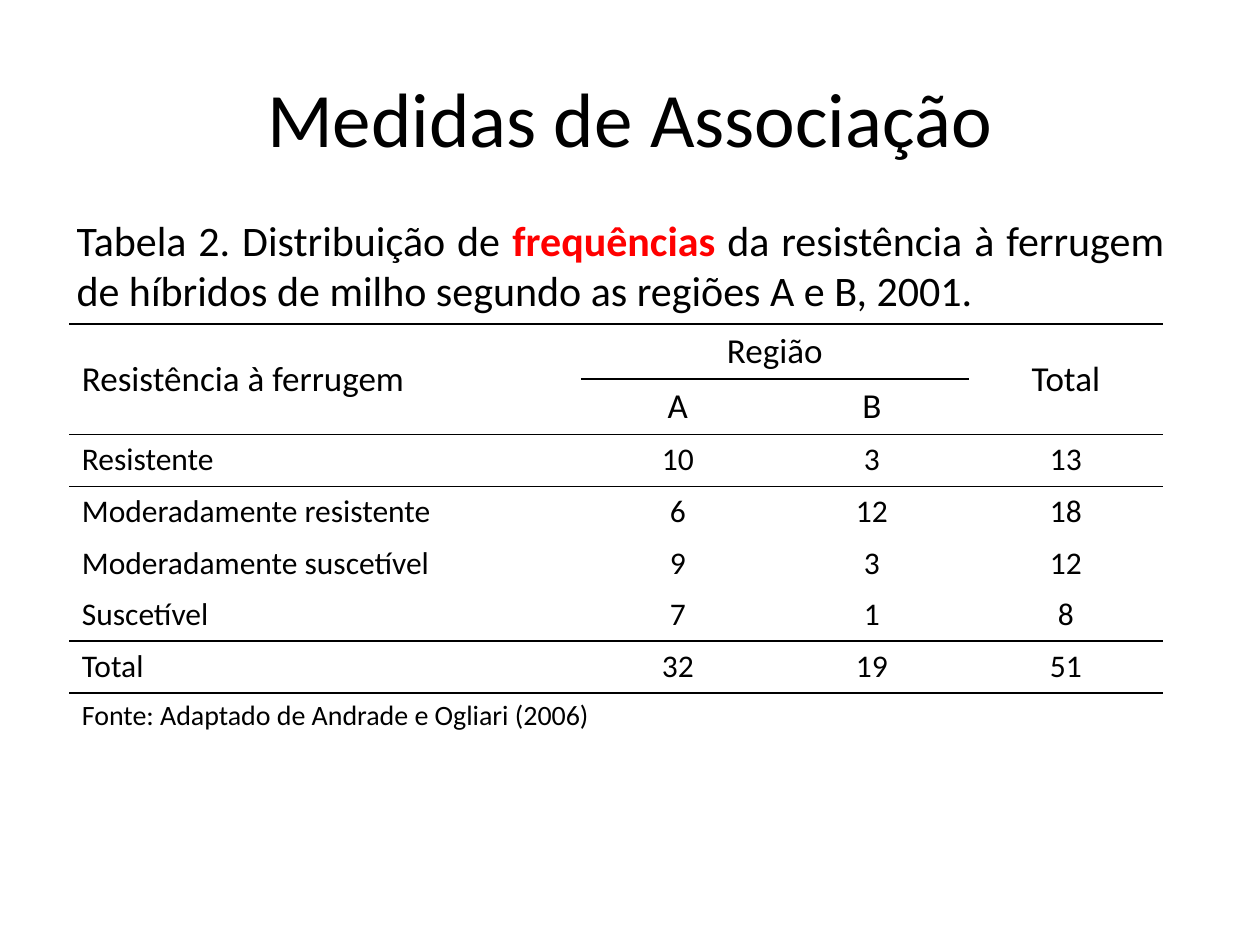
"""Build a slide with a frequency table of rust resistance by region."""
from lxml.etree import SubElement
from pptx import Presentation
from pptx.dml.color import RGBColor
from pptx.enum.text import MSO_ANCHOR, PP_ALIGN
from pptx.oxml.ns import qn
from pptx.util import Inches, Pt

BLACK, RED = "000000", "FF0000"
NO_STYLE_NO_GRID = "{2D5ABB26-0587-4C30-8999-92F81FD0307C}"
COLUMN_WIDTHS = [4.06, 1.54, 1.54, 1.54]
ROW_HEIGHTS = [0.44] * 2 + [0.41] * 6
TEXT_SIZES = [20] * 2 + [18] * 5 + [16]
ROWS = [
    ["Resistência à ferrugem", "Região", "", "Total"],
    ["", "A", "B", ""],
    ["Resistente", "10", "3", "13"],
    ["Moderadamente resistente", "6", "12", "18"],
    ["Moderadamente suscetível", "9", "3", "12"],
    ["Suscetível", "7", "1", "8"],
    ["Total", "32", "19", "51"],
    ["Fonte: Adaptado de Andrade e Ogliari (2006)", "", "", ""],
]
MERGES = [(0, 0, 1, 0), (0, 1, 0, 2), (0, 3, 1, 3), (7, 0, 7, 3)]
RULED_COLUMNS = {0: range(4), 1: (1, 2), 2: range(4), 6: range(4), 7: range(4)}


def add_text(paragraph, text, color=BLACK, **formats):
    """Add a run to the paragraph with the given font values."""
    run = paragraph.add_run()
    run.text = text
    run.font.color.rgb = RGBColor.from_string(color)
    for name, value in {"name": "Calibri", **formats}.items():
        setattr(run.font, name, value)


def add_border(cell, side):
    """Draw a thin black line on one side of the cell."""
    line = SubElement(cell._tc.get_or_add_tcPr(), qn(f"a:{side}"), w=str(Pt(1)))
    fill = SubElement(line, qn("a:solidFill"))
    SubElement(fill, qn("a:srgbClr"), val=BLACK)


presentation = Presentation()
presentation.slide_width, presentation.slide_height = Inches(10), Inches(7.5)
width, height = presentation.slide_width, presentation.slide_height
slide = presentation.slides.add_slide(presentation.slide_layouts[5])

title = slide.shapes.title
title_box = {"left": 0.05 * width, "top": 0.04 * height,
             "width": 0.9 * width, "height": height / 6}
for name, value in title_box.items():
    setattr(title, name, int(value))
title.text_frame.vertical_anchor = MSO_ANCHOR.MIDDLE
title.text_frame.paragraphs[0].alignment = PP_ALIGN.CENTER
add_text(title.text_frame.paragraphs[0], "Medidas de Associação", size=Pt(44))

caption = slide.shapes.add_textbox(
    int(0.051 * width), int(0.22 * height), int(0.883 * width), int(0.12 * height))
caption.text_frame.word_wrap = True
paragraph = caption.text_frame.paragraphs[0]
for name, value in {"alignment": PP_ALIGN.JUSTIFY, "space_before": Pt(6)}.items():
    setattr(paragraph, name, value)
for text, color, bold in [
    ("Tabela 2. Distribuição de ", BLACK, False),
    ("frequências ", RED, True),
    ("da resistência à ferrugem de híbridos de milho segundo as regiões A e B, 2001.",
     BLACK, False),
]:
    add_text(paragraph, text, color, size=Pt(24), bold=bold)

table = slide.shapes.add_table(
    len(ROWS), len(COLUMN_WIDTHS), Inches(0.55), Inches(2.57),
    Inches(sum(COLUMN_WIDTHS)), Inches(sum(ROW_HEIGHTS))).table
table.first_row = table.horz_banding = False
table._tbl.tblPr.find(qn("a:tableStyleId")).text = NO_STYLE_NO_GRID
for column, column_width in zip(table.columns, COLUMN_WIDTHS):
    column.width = Inches(column_width)
for row, row_height in zip(table.rows, ROW_HEIGHTS):
    row.height = Inches(row_height)
for top, left, bottom, right in MERGES:
    table.cell(top, left).merge(table.cell(bottom, right))

for row_index, texts in enumerate(ROWS):
    for column_index, text in enumerate(texts):
        cell = table.cell(row_index, column_index)
        for side, edge in (("lnT", row_index), ("lnB", row_index + 1)):
            if column_index in RULED_COLUMNS.get(edge, ()):
                add_border(cell, side)
        cell.fill.background()
        if text:
            paragraph = cell.text_frame.paragraphs[0]
            paragraph.alignment = PP_ALIGN.CENTER if column_index else PP_ALIGN.LEFT
            add_text(paragraph, text, size=Pt(TEXT_SIZES[row_index]))
for column_index in (0, 3):
    table.cell(0, column_index).vertical_anchor = MSO_ANCHOR.MIDDLE

presentation.save("out.pptx")
